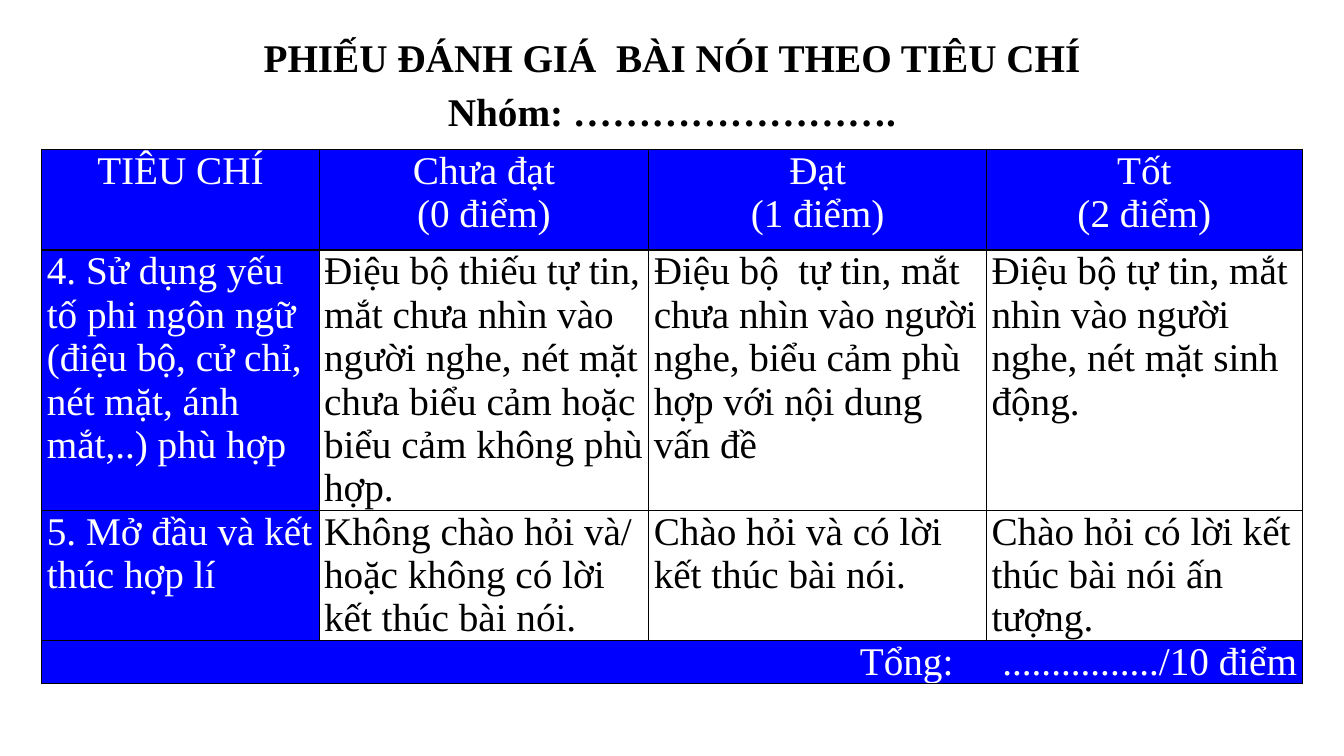
from lxml.etree import SubElement
from pptx import Presentation
from pptx.dml.color import RGBColor
from pptx.enum.text import PP_ALIGN
from pptx.oxml.ns import qn
from pptx.util import Inches, Pt

WIDE, HIGH = 13.33, 7.5
FONT, SIZE = "Times New Roman", 28
BLUE, WHITE, BLACK = "0000FF", "FFFFFF", "000000"
COLS = [2.75, 3.27, 3.35, 3.13]
ROWS = [1, 2.58, 1.29, 0.43]

TITLE = "PHIẾU ĐÁNH GIÁ  BÀI NÓI THEO TIÊU CHÍ\nNhóm: ……………………."
GRID = [
    ["TIÊU CHÍ", "Chưa đạt\n(0 điểm)", "Đạt\n(1 điểm)", "Tốt\n(2 điểm)"],
    ["4. Sử dụng yếu tố phi ngôn ngữ (điệu bộ, cử chỉ, nét mặt, ánh mắt,..) phù hợp",
     "Điệu bộ thiếu tự tin, mắt chưa nhìn vào người nghe, nét mặt chưa biểu cảm "
     "hoặc biểu cảm không phù hợp.",
     "Điệu bộ  tự tin, mắt chưa nhìn vào người nghe, biểu cảm phù hợp với nội dung vấn đề",
     "Điệu bộ tự tin, mắt nhìn vào người nghe, nét mặt sinh động."],
    ["5. Mở đầu và kết thúc hợp lí",
     "Không chào hỏi và/ hoặc không có lời kết thúc bài nói.",
     "Chào hỏi và có lời kết thúc bài nói.",
     "Chào hỏi có lời kết thúc bài nói ấn tượng."],
    ["Tổng:     ................/10 điểm", "", "", ""],
]


def color(code):
    return RGBColor.from_string(code)


def write(frame, text, tint, align, bold=False, space=1.0):
    frame.word_wrap = True
    frame.text = text
    for para in frame.paragraphs:
        para.alignment = align
        para.line_spacing = space
        font = para.font
        font.name, font.size, font.bold = FONT, Pt(SIZE), bold
        font.color.rgb = color(tint)


def border(cell):
    """Draw a thin black line on all four sides; call before filling."""
    props = cell._tc.get_or_add_tcPr()
    for side in ("a:lnL", "a:lnR", "a:lnT", "a:lnB"):
        line = SubElement(props, qn(side), w=str(Pt(1)))
        fill = SubElement(line, qn("a:solidFill"))
        SubElement(fill, qn("a:srgbClr"), val=BLACK)


def style(cell, text, dark, align):
    cell.margin_left = cell.margin_right = Inches(0.05)
    cell.margin_top = cell.margin_bottom = 0
    border(cell)
    if dark:
        cell.fill.solid()
        cell.fill.fore_color.rgb = color(BLUE)
    else:
        cell.fill.background()
    write(cell.text_frame, text, WHITE if dark else BLACK, align)


def add_title(slide):
    wide = 9.63
    box = slide.shapes.add_textbox(
        Inches((WIDE - wide) / 2), Inches(0.21), Inches(wide), Inches(1.14))
    write(box.text_frame, TITLE, BLACK, PP_ALIGN.CENTER, bold=True, space=1.15)


def add_grid(slide):
    wide = sum(COLS)
    table = slide.shapes.add_table(
        len(ROWS), len(COLS), Inches((WIDE - wide) / 2), Inches(1.48),
        Inches(wide), Inches(sum(ROWS))).table
    table.first_row = table.horz_banding = False
    for col, size in zip(table.columns, COLS):
        col.width = Inches(size)
    for row, size in zip(table.rows, ROWS):
        row.height = Inches(size)
    last = len(ROWS) - 1
    aligns = {0: PP_ALIGN.CENTER, last: PP_ALIGN.RIGHT}
    for r, texts in enumerate(GRID):
        for c, text in enumerate(texts):
            dark = r in (0, last) or c == 0
            style(table.cell(r, c), text, dark, aligns.get(r, PP_ALIGN.LEFT))
    table.cell(last, 0).merge(table.cell(last, len(COLS) - 1))


def main():
    deck = Presentation()
    deck.slide_width, deck.slide_height = Inches(WIDE), Inches(HIGH)
    slide = deck.slides.add_slide(deck.slide_layouts[6])
    add_grid(slide)
    add_title(slide)
    deck.save("out.pptx")


if __name__ == "__main__":
    main()
